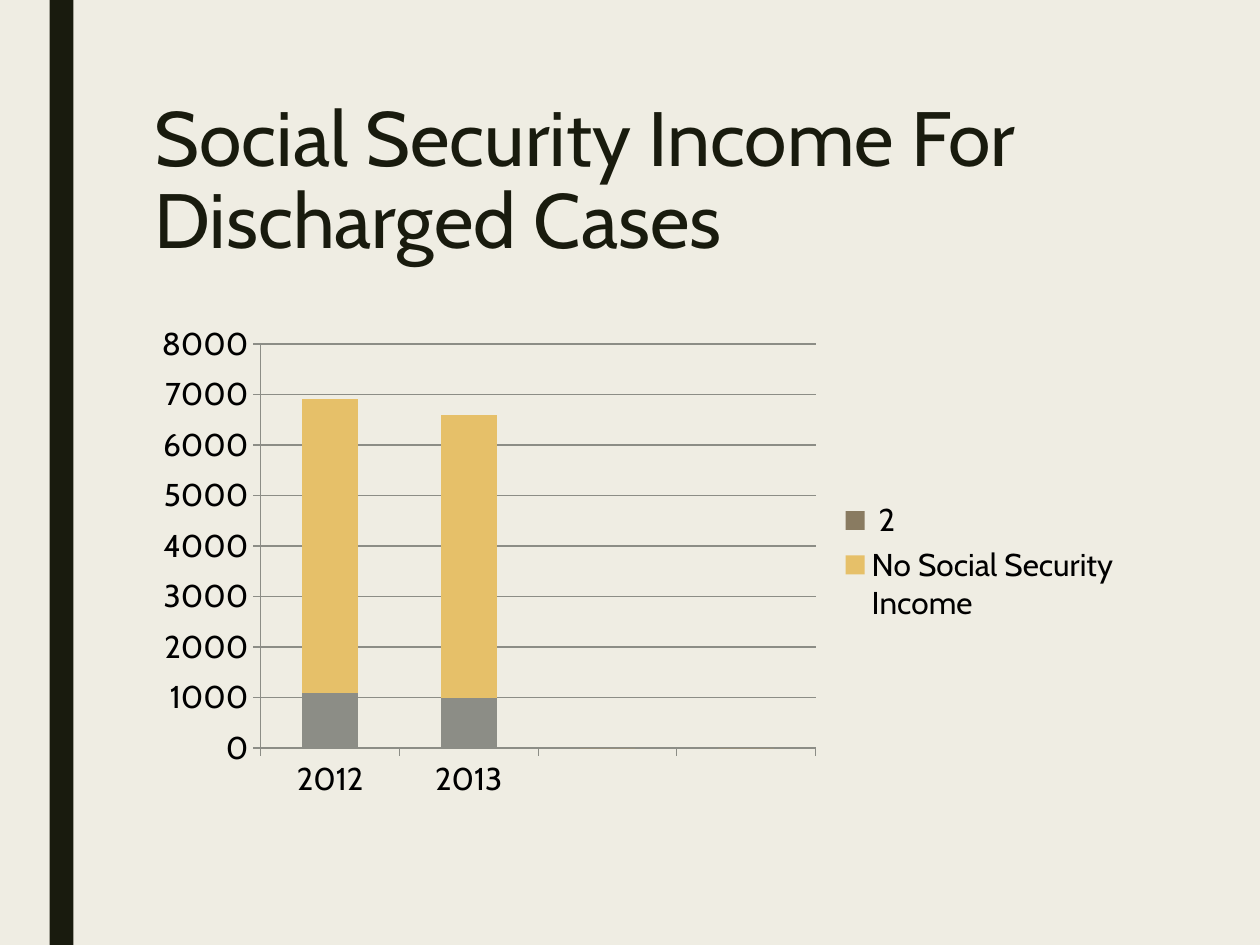
from lxml.etree import SubElement
from pptx import Presentation
from pptx.chart.data import CategoryChartData
from pptx.dml.color import RGBColor
from pptx.enum.chart import XL_CHART_TYPE, XL_LEGEND_POSITION, XL_TICK_MARK
from pptx.enum.shapes import MSO_SHAPE
from pptx.enum.text import MSO_ANCHOR, PP_ALIGN
from pptx.oxml.ns import qn
from pptx.util import Cm, Pt

# Content
TITLE = "Social Security Income For Discharged Cases"
YEARS = ["2012", "2013", "", ""]
SERIES = [
    ("Series 1", [1100, 1000, 0, 0], "gray"),
    ("No Social Security Income", [5800, 5600, 0, 0], "gold"),
    (" 2", [0, 0, 0, 0], "brown"),
]
HIDDEN = 0  # series left out of the legend

# Style
FONT = "Cabin"
COLORS = {"back": "EFEDE3", "dark": "191B0E", "text": "000000", "line": "8C8D86",
          "gray": "8C8D86", "gold": "E6C069", "brown": "897B61"}
LEFT, WIDTH = Cm(2.86), Cm(20)


def color(name):
    return RGBColor.from_string(COLORS[name])


def paint(fill, name):
    fill.solid()
    fill.fore_color.rgb = color(name)


def style(font, size, name):
    font.name, font.size, font.bold = FONT, Pt(size), False
    font.color.rgb = color(name)


def rule(line):
    line.color.rgb = color("line")
    line.width = Pt(0.75)


deck = Presentation()
deck.slide_width, deck.slide_height = Cm(25.4), Cm(19.05)
slide = deck.slides.add_slide(deck.slide_layouts[5])
paint(slide.background.fill, "back")

# Side bar
bar = slide.shapes.add_shape(MSO_SHAPE.RECTANGLE, Cm(1), 0, Cm(0.48), deck.slide_height)
bar.shadow.inherit = False
paint(bar.fill, "dark")
bar.line.fill.background()

# Title
title = slide.shapes.title
title.left, title.top, title.width, title.height = LEFT, Cm(1.9), WIDTH, Cm(4.13)
frame = title.text_frame
frame.text = TITLE
frame.word_wrap = True
frame.vertical_anchor = MSO_ANCHOR.TOP
head = frame.paragraphs[0]
head.alignment, head.line_spacing = PP_ALIGN.LEFT, 0.89
style(head.font, 44, "dark")

# Stacked columns
data = CategoryChartData()
data.categories = YEARS
for name, values, _ in SERIES:
    data.add_series(name, values)
chart = slide.shapes.add_chart(XL_CHART_TYPE.COLUMN_STACKED, LEFT, Cm(6.35),
                               WIDTH, Cm(9.95), data).chart
chart.has_title = False
style(chart.font, 18, "text")
plot = chart.plots[0]
plot.gap_width, plot.overlap, plot.vary_by_categories = 150, 100, False
for bars, (_, _, tone) in zip(plot.series, SERIES):
    paint(bars.format.fill, tone)

# Axes
for axis in (chart.category_axis, chart.value_axis):
    axis.major_tick_mark = XL_TICK_MARK.OUTSIDE
    axis.minor_tick_mark = XL_TICK_MARK.NONE
    rule(axis.format.line)
scale = chart.value_axis
scale.minimum_scale, scale.maximum_scale, scale.major_unit = 0, 8000, 1000
scale.has_major_gridlines = True
rule(scale.major_gridlines.format.line)

# Legend without the hidden series
chart.has_legend = True
legend = chart.legend
legend.position = XL_LEGEND_POSITION.RIGHT
legend.include_in_layout = False
root = chart.element.find(".//" + qn("c:legend"))
entry = SubElement(root, qn("c:legendEntry"))
SubElement(entry, qn("c:idx")).set("val", str(HIDDEN))
SubElement(entry, qn("c:delete")).set("val", "1")
root.find(qn("c:legendPos")).addnext(entry)

deck.save("out.pptx")
